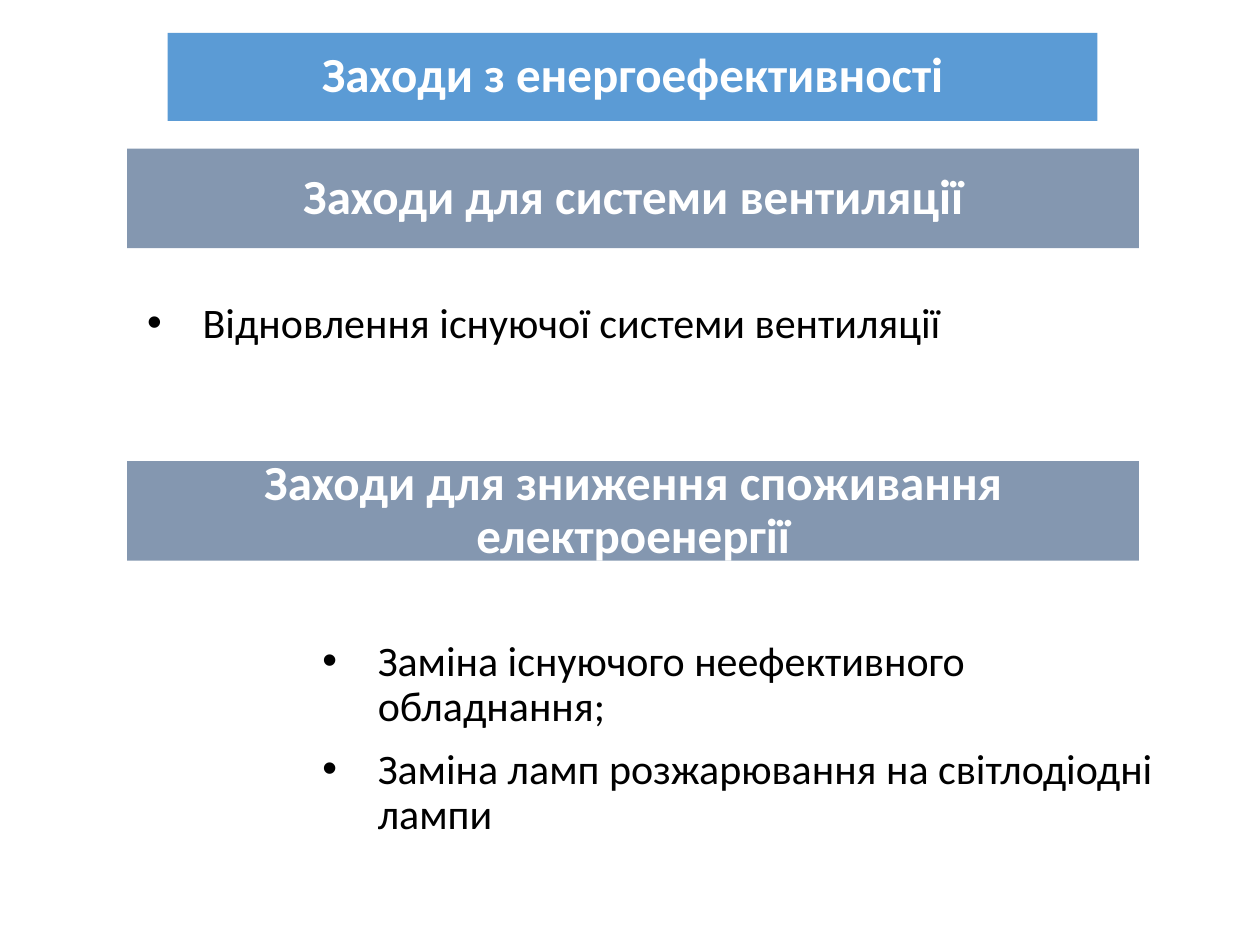
"""Builds a slide of energy efficiency measures: headed bands with bulleted lists."""
from dataclasses import dataclass

from lxml.etree import SubElement
from pptx import Presentation
from pptx.dml.color import RGBColor
from pptx.enum.shapes import MSO_SHAPE
from pptx.enum.text import MSO_ANCHOR, PP_ALIGN
from pptx.oxml.ns import qn
from pptx.util import Inches, Pt


@dataclass(frozen=True)
class Theme:
    font: str = "Calibri"
    title: str = "5B9BD5"
    section: str = "8497B0"
    light: str = "FFFFFF"
    dark: str = "000000"
    heading_size: int = 28
    measure_size: int = 24


theme = Theme()
deck = Presentation()
deck.slide_width, deck.slide_height = Inches(10), Inches(7.5)
slide = deck.slides.add_slide(deck.slide_layouts[6])


def place(left, top, width, height):
    """Turn percentages of the slide into lengths."""
    across, down = deck.slide_width / 100, deck.slide_height / 100
    return [round(v) for v in (left * across, top * down, width * across, height * down)]


def write(paragraph, text, color, paragraph_format, font_format):
    """Fill a paragraph and apply its format values."""
    paragraph.text = text
    for target, values in ((paragraph, paragraph_format), (paragraph.font, font_format)):
        for name, value in values.items():
            setattr(target, name, value)
    paragraph.font.color.rgb = RGBColor.from_string(color)


heading_paragraph = {"alignment": PP_ALIGN.CENTER, "line_spacing": 0.9}
heading_font = {"name": theme.font, "size": Pt(theme.heading_size), "bold": True}
measure_font = {"name": theme.font, "size": Pt(theme.measure_size)}
heading_frame = {"word_wrap": True, "vertical_anchor": MSO_ANCHOR.MIDDLE}

section_left, section_width, section_height = 10.1, 80.3, 10.53
list_right = 93.4

headings = [
    ("Заходи з енергоефективності", theme.title, (13.3, 3.47, 73.8, 9.33)),
    ("Заходи для системи вентиляції", theme.section,
     (section_left, 15.73, section_width, section_height)),
    ("Заходи для зниження споживання електроенергії", theme.section,
     (section_left, 48.8, section_width, section_height)),
]
for heading, fill, area in headings:
    band = slide.shapes.add_shape(MSO_SHAPE.RECTANGLE, *place(*area))
    band.shadow.inherit = False
    band.fill.solid()
    band.fill.fore_color.rgb = RGBColor.from_string(fill)
    band.line.fill.background()
    for name, value in heading_frame.items():
        setattr(band.text_frame, name, value)
    write(band.text_frame.paragraphs[0], heading, theme.light, heading_paragraph, heading_font)

measure_lists = [
    (section_left, 31.33, 9.6, ["Відновлення існуючої системи вентиляції"]),
    (24, 67.07, 26.8, ["Заміна існуючого неефективного обладнання;",
                       "Заміна ламп розжарювання на світлодіодні лампи"]),
]
for left, top, height, measures in measure_lists:
    area = place(left, top, list_right - left, height)
    measure_frame = slide.shapes.add_textbox(*area).text_frame
    measure_frame.word_wrap = True
    for index, measure in enumerate(measures):
        item = measure_frame.add_paragraph() if index else measure_frame.paragraphs[0]
        spacing = {"line_spacing": 0.9, "space_before": Pt(10 if index else 0)}
        write(item, measure, theme.dark, spacing, {})
        layout = item._p.get_or_add_pPr()
        layout.set("marL", str(Inches(0.5)))
        layout.set("indent", str(Inches(-0.44)))
        bullet_color = SubElement(layout, qn("a:buClr"))
        SubElement(bullet_color, qn("a:srgbClr"), val=theme.dark)
        SubElement(layout, qn("a:buFont"), typeface="Arial")
        SubElement(layout, qn("a:buChar"), char="•")
        default_font = layout.find(qn("a:defRPr"))
        if default_font is not None:
            layout.append(default_font)
        for name, value in measure_font.items():
            setattr(item.font, name, value)

deck.save("out.pptx")
